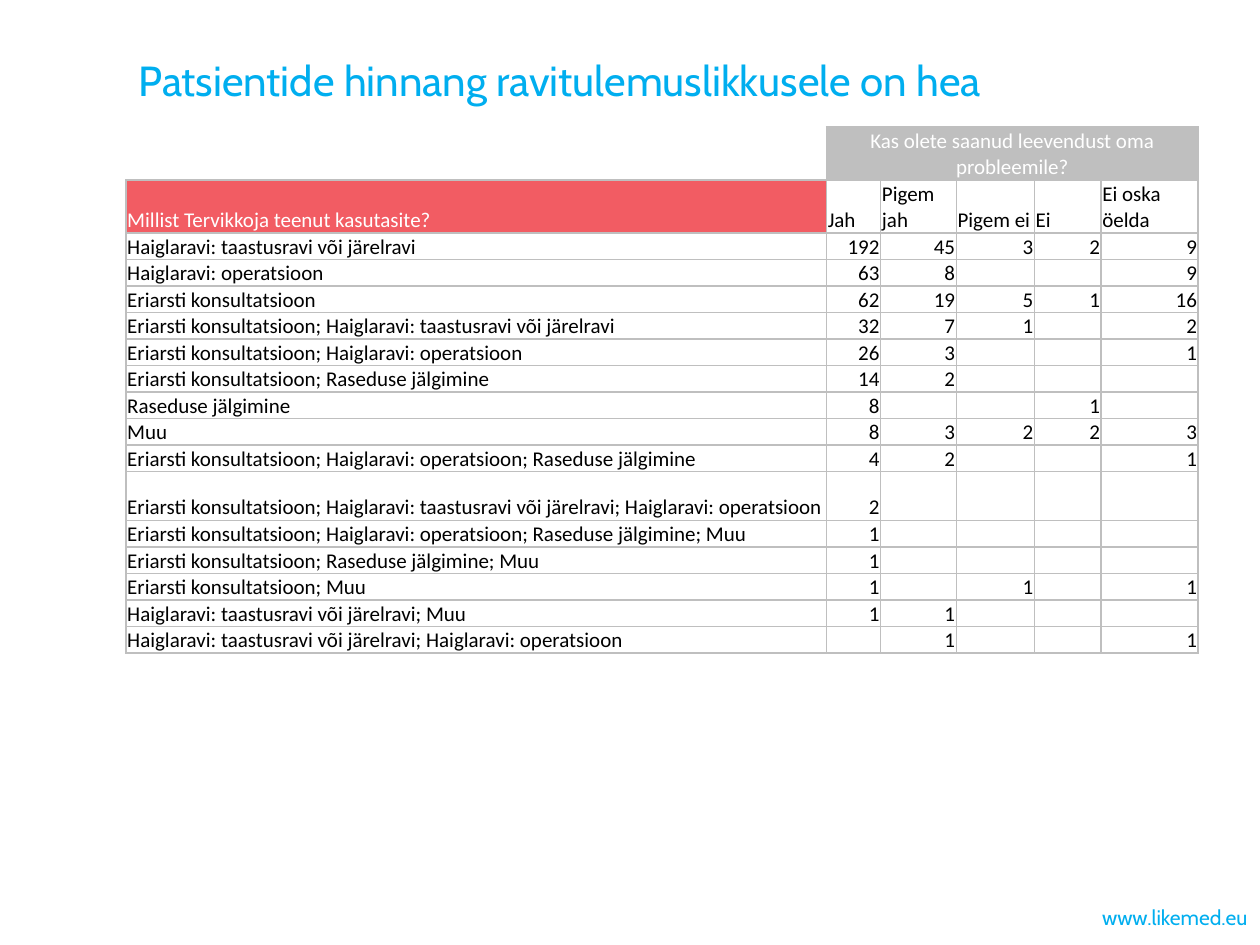
from lxml.etree import SubElement
from pptx import Presentation
from pptx.dml.color import RGBColor
from pptx.enum.text import MSO_ANCHOR as Anchor, PP_ALIGN as Align
from pptx.oxml.ns import qn
from pptx.util import Inches, Pt

BLUE, GRAY, RED, WHITE, BLACK = "00AEEF", "BFBFBF", "F25C63", "FFFFFF", "000000"
COLS = [5.56, 0.43, 0.6, 0.62, 0.53, 0.77]
TALL, LOW = 0.42, 0.21
EXAM, STAY = "Eriarsti konsultatsioon", "Haiglaravi: taastusravi või järelravi"
KNIFE, BABY = "Haiglaravi: operatsioon", "Raseduse jälgimine"
HEADS = ["Millist Tervikkoja teenut kasutasite?", "Jah", "Pigem jah",
         "Pigem ei", "Ei", "Ei oska öelda"]
ROWS = [
    ([STAY], 192, 45, 3, 2, 9),
    ([KNIFE], 63, 8, "", "", 9),
    ([EXAM], 62, 19, 5, 1, 16),
    ([EXAM, STAY], 32, 7, 1, "", 2),
    ([EXAM, KNIFE], 26, 3, "", "", 1),
    ([EXAM, BABY], 14, 2, "", "", ""),
    ([BABY], 8, "", "", 1, ""),
    (["Muu"], 8, 3, 2, 2, 3),
    ([EXAM, KNIFE, BABY], 4, 2, "", "", 1),
    ([EXAM, STAY, KNIFE], 2, "", "", "", ""),
    ([EXAM, KNIFE, BABY, "Muu"], 1, "", "", "", ""),
    ([EXAM, BABY, "Muu"], 1, "", "", "", ""),
    ([EXAM, "Muu"], 1, "", 1, "", 1),
    ([STAY, "Muu"], 1, 1, "", "", ""),
    ([STAY, KNIFE], "", 1, "", "", 1),
]


def color(code):
    """Turn a hex string into a color."""
    return RGBColor.from_string(code)


def write(frame, text, size, face, code, align):
    """Write one styled paragraph into a text frame."""
    frame.word_wrap = True
    para = frame.paragraphs[0]
    para.text = text
    para.alignment = align
    font = para.font
    font.size, font.name, font.bold = Pt(size), face, False
    font.color.rgb = color(code)
    if not text:
        SubElement(para._p, qn("a:endParaRPr"), sz=str(size * 100))


def add_title(slide, text):
    """Place and style the slide title."""
    title = slide.shapes.title
    title.left, title.top = Inches(1), Inches(0.48)
    title.width, title.height = Inches(9), Inches(0.31)
    title.text_frame.vertical_anchor = Anchor.MIDDLE
    write(title.text_frame, text, 24, "Cabin", BLUE, Align.LEFT)


def add_site(slide, text):
    """Add the web address in the bottom corner."""
    box = slide.shapes.add_textbox(Inches(6.83), Inches(7.08), Inches(3.17), Inches(0.4))
    box.text_frame.vertical_anchor = Anchor.MIDDLE
    write(box.text_frame, text, 12, "Cabin", BLUE, Align.RIGHT)


def add_edges(cell, **codes):
    """Draw the four cell borders, gray unless a side has its own color."""
    props = cell._tc.get_or_add_tcPr()
    for side in "LRTB":
        line = SubElement(props, qn(f"a:ln{side}"), w=str(Pt(1)))
        fill = SubElement(line, qn("a:solidFill"))
        SubElement(fill, qn("a:srgbClr"), val=codes.get(side, GRAY))


def fill_cell(cell, text, align=Align.LEFT, ink=BLACK, back=None, **codes):
    """Fill one table cell with text, borders and background."""
    cell.margin_left = cell.margin_right = cell.margin_top = Inches(0.01)
    cell.margin_bottom = 0
    cell.vertical_anchor = Anchor.BOTTOM
    add_edges(cell, **codes)
    if back:
        cell.fill.solid()
        cell.fill.fore_color.rgb = color(back)
    else:
        cell.fill.background()
    write(cell.text_frame, text, 12, "Calibri", ink, align)


def add_grid(slide):
    """Add the table of answers by service."""
    highs = [TALL, TALL] + [0.39 if row[0] == [EXAM, STAY, KNIFE] else LOW for row in ROWS]
    frame = slide.shapes.add_table(len(highs), len(COLS), Inches(1), Inches(1.01),
                                   Inches(8.5), Inches(sum(highs)))
    table = frame.table
    table.first_row = table.horz_banding = False
    for col, width in zip(table.columns, COLS):
        col.width = Inches(width)
    for row, high in zip(table.rows, highs):
        row.height = Inches(high)
    fill_cell(table.cell(0, 0), "", L=WHITE, T=WHITE)
    table.cell(0, 1).merge(table.cell(0, 5))
    for c in range(1, len(COLS)):
        text = "Kas olete saanud leevendust oma probleemile?" if c == 1 else ""
        fill_cell(table.cell(0, c), text, Align.CENTER, WHITE, GRAY)
    for c, head in enumerate(HEADS):
        ink, back = (BLACK, None) if c else (WHITE, RED)
        fill_cell(table.cell(1, c), head, ink=ink, back=back)
    for r, (names, *counts) in enumerate(ROWS, 2):
        fill_cell(table.cell(r, 0), "; ".join(names))
        for c, count in enumerate(counts, 1):
            fill_cell(table.cell(r, c), str(count), Align.RIGHT)


def main():
    """Build and save the slide."""
    deck = Presentation()
    deck.slide_width, deck.slide_height = Inches(10), Inches(7.5)
    slide = deck.slides.add_slide(deck.slide_layouts[5])
    add_title(slide, "Patsientide hinnang ravitulemuslikkusele on hea")
    add_site(slide, "www.likemed.eu")
    add_grid(slide)
    deck.save("out.pptx")


if __name__ == "__main__":
    main()
